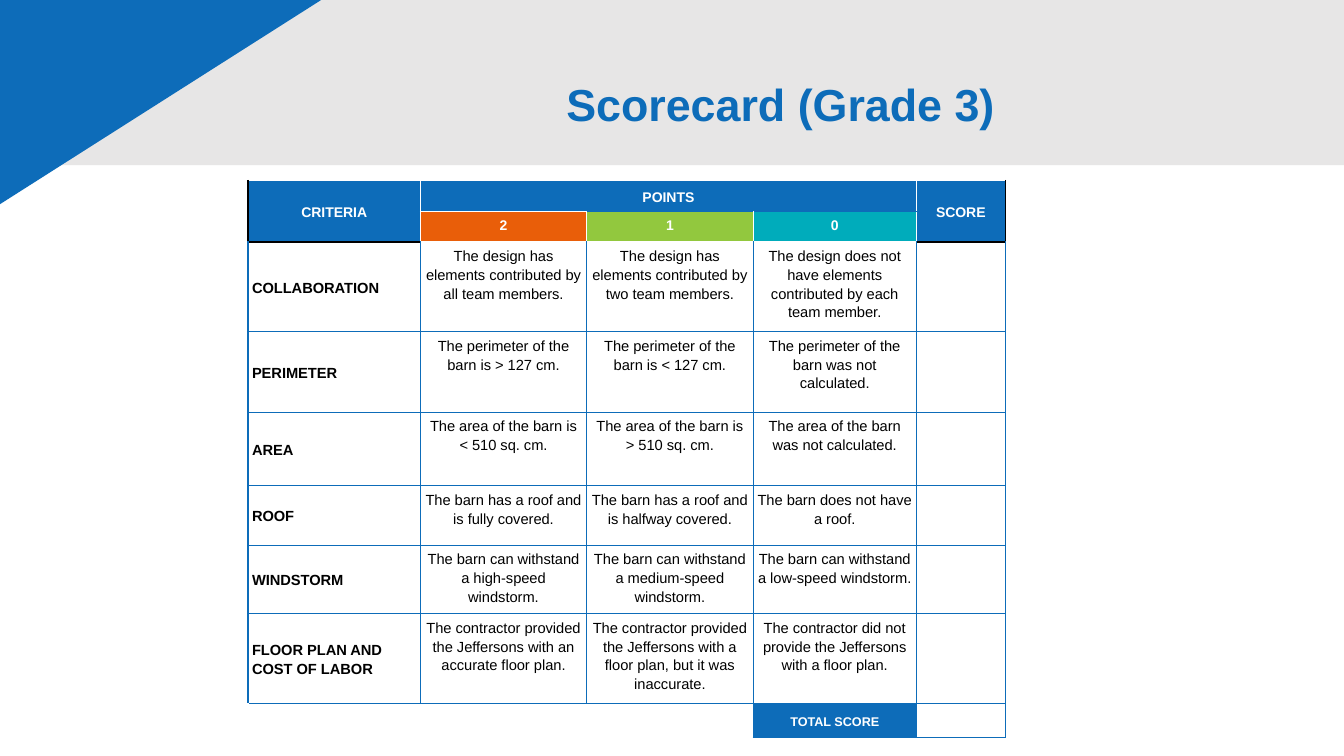
"""Build the Grade 3 scorecard slide with its scoring table."""
from lxml.etree import SubElement
from pptx import Presentation
from pptx.dml.color import RGBColor
from pptx.enum.shapes import MSO_SHAPE
from pptx.enum.text import MSO_ANCHOR, MSO_AUTO_SIZE, PP_ALIGN
from pptx.oxml.ns import qn
from pptx.util import Inches, Pt

BLUE, WHITE, BLACK, GRAY = "0D6CB9", "FFFFFF", "000000", "E7E6E6"
POINT_FILLS = {1: "E95E09", 2: "92C83E", 3: "00ACBB"}
COLUMN_WIDTHS = [1.71, 1.65, 1.65, 1.62, 0.88]
ROW_HEIGHTS = [0.31, 0.3, 0.89, 0.8, 0.73, 0.59, 0.68, 0.89, 0.34]
ROWS = [
    ["CRITERIA", "POINTS", "", "", "SCORE"],
    ["", "2", "1", "0", ""],
    ["COLLABORATION",
     "The design has elements contributed by all team members.",
     "The design has elements contributed by two team members.",
     "The design does not have elements contributed by each team member.", ""],
    ["PERIMETER",
     "The perimeter of the barn is > 127 cm.",
     "The perimeter of the barn is < 127 cm.",
     "The perimeter of the barn was not calculated.", ""],
    ["AREA",
     "The area of the barn is < 510 sq. cm.",
     "The area of the barn is > 510 sq. cm.",
     "The area of the barn was not calculated.", ""],
    ["ROOF",
     "The barn has a roof and is fully covered.",
     "The barn has a roof and is halfway covered.",
     "The barn does not have a roof.", ""],
    ["WINDSTORM",
     "The barn can withstand a high-speed windstorm.",
     "The barn can withstand a medium-speed windstorm.",
     "The barn can withstand a low-speed windstorm.", ""],
    ["FLOOR PLAN AND COST OF LABOR",
     "The contractor provided the Jeffersons with an accurate floor plan.",
     "The contractor provided the Jeffersons with a floor plan, but it was inaccurate.",
     "The contractor did not provide the Jeffersons with a floor plan.", ""],
    ["", "", "", "TOTAL SCORE", ""],
]
TOTAL_ROW, SCORE_COLUMN = len(ROWS) - 1, len(COLUMN_WIDTHS) - 1


def color(value):
    return RGBColor.from_string(value)


def format_text(paragraph, text, size, text_color, bold):
    run = paragraph.add_run()
    run.text = text
    run.font.color.rgb = color(text_color)
    for name, value in {"name": "Arial", "size": Pt(size), "bold": bold}.items():
        setattr(run.font, name, value)


presentation = Presentation()
presentation.slide_width, presentation.slide_height = Inches(13.33), Inches(7.5)
slide = presentation.slides.add_slide(presentation.slide_layouts[5])

for preset, box, fill, rotation in [
    (MSO_SHAPE.RECTANGLE, (-0.26, -0.19, 13.59, 1.83), GRAY, 0),
    (MSO_SHAPE.RIGHT_TRIANGLE, (-2.57, -1.72, 8.46, 5.38), BLUE, 180),
]:
    shape = slide.shapes.add_shape(preset, *map(Inches, box))
    shape.shadow.inherit = False
    shape.fill.solid()
    shape.fill.fore_color.rgb = color(fill)
    shape.line.fill.background()
    shape.rotation = rotation
    if rotation:
        shape._element.spPr.find(qn("a:xfrm")).set("flipH", "1")

title = slide.shapes.title
slide.shapes._spTree.append(title._element)
for name, value in {"left": 0.27, "top": 0.34, "width": 9.7, "height": 1.45}.items():
    setattr(title, name, Inches(value))
title_frame = title.text_frame
for name, value in {"word_wrap": True, "auto_size": MSO_AUTO_SIZE.NONE,
                    "vertical_anchor": MSO_ANCHOR.MIDDLE}.items():
    setattr(title_frame, name, value)
paragraph = title_frame.paragraphs[0]
paragraph.alignment, paragraph.line_spacing = PP_ALIGN.RIGHT, 0.9
format_text(paragraph, "Scorecard (Grade 3)", 32, BLUE, True)

table = slide.shapes.add_table(
    len(ROWS), len(COLUMN_WIDTHS), Inches(2.46), Inches(1.79),
    Inches(sum(COLUMN_WIDTHS)), Inches(sum(ROW_HEIGHTS))).table
table.first_row = table.horz_banding = False
for column, width in zip(table.columns, COLUMN_WIDTHS):
    column.width = Inches(width)
for row, height in zip(table.rows, ROW_HEIGHTS):
    row.height = Inches(height)
for first, last in [((0, 0), (1, 0)), ((0, 1), (0, 3)),
                    ((0, SCORE_COLUMN), (1, SCORE_COLUMN)),
                    ((TOTAL_ROW, 0), (TOTAL_ROW, 2))]:
    table.cell(*first).merge(table.cell(*last))

for row_index, texts in enumerate(ROWS):
    for column_index, text in enumerate(texts):
        cell = table.cell(row_index, column_index)
        header = row_index < 2
        total = row_index == TOTAL_ROW and column_index == 3
        outer = column_index in (0, SCORE_COLUMN)
        label = column_index == 0 and not header
        for side in ("left", "right", "top", "bottom"):
            setattr(cell, f"margin_{side}", Inches(0.04))
        top_anchored = row_index > 0 and not label and not total
        cell.vertical_anchor = MSO_ANCHOR.TOP if top_anchored else MSO_ANCHOR.MIDDLE

        borders = dict.fromkeys(("L", "R", "T", "B"), WHITE if header else BLUE)
        if header and outer:
            borders["B"] = BLACK
            borders["L" if column_index == 0 else "R"] = BLACK
        if row_index == 1 and column_index in (2, 3):
            borders["T"] = BLUE
        if row_index == 2:
            borders["T"] = BLACK if outer else WHITE
        if row_index == TOTAL_ROW and column_index == 0:
            borders["L"] = borders["B"] = WHITE
        if not cell.is_spanned:
            properties = cell._tc.get_or_add_tcPr()
            for side, border_color in borders.items():
                line = SubElement(properties, qn(f"a:ln{side}"), w=str(Pt(1)))
                solid = SubElement(line, qn("a:solidFill"))
                SubElement(solid, qn("a:srgbClr"), val=border_color)

        fill = BLUE if header or total else WHITE
        if row_index == 1:
            fill = POINT_FILLS.get(column_index, BLUE)
        cell.fill.solid()
        cell.fill.fore_color.rgb = color(fill)

        paragraph = cell.text_frame.paragraphs[0]
        paragraph.alignment = PP_ALIGN.LEFT if label else PP_ALIGN.CENTER
        paragraph.line_spacing = 1.15
        size = 10 if header else 9 if total else 10.5
        if text:
            format_text(paragraph, text, size, WHITE if header or total else BLACK,
                        header or label or total)
        SubElement(paragraph._p, qn("a:endParaRPr"), sz=str(int(size * 100)))

presentation.save("out.pptx")
